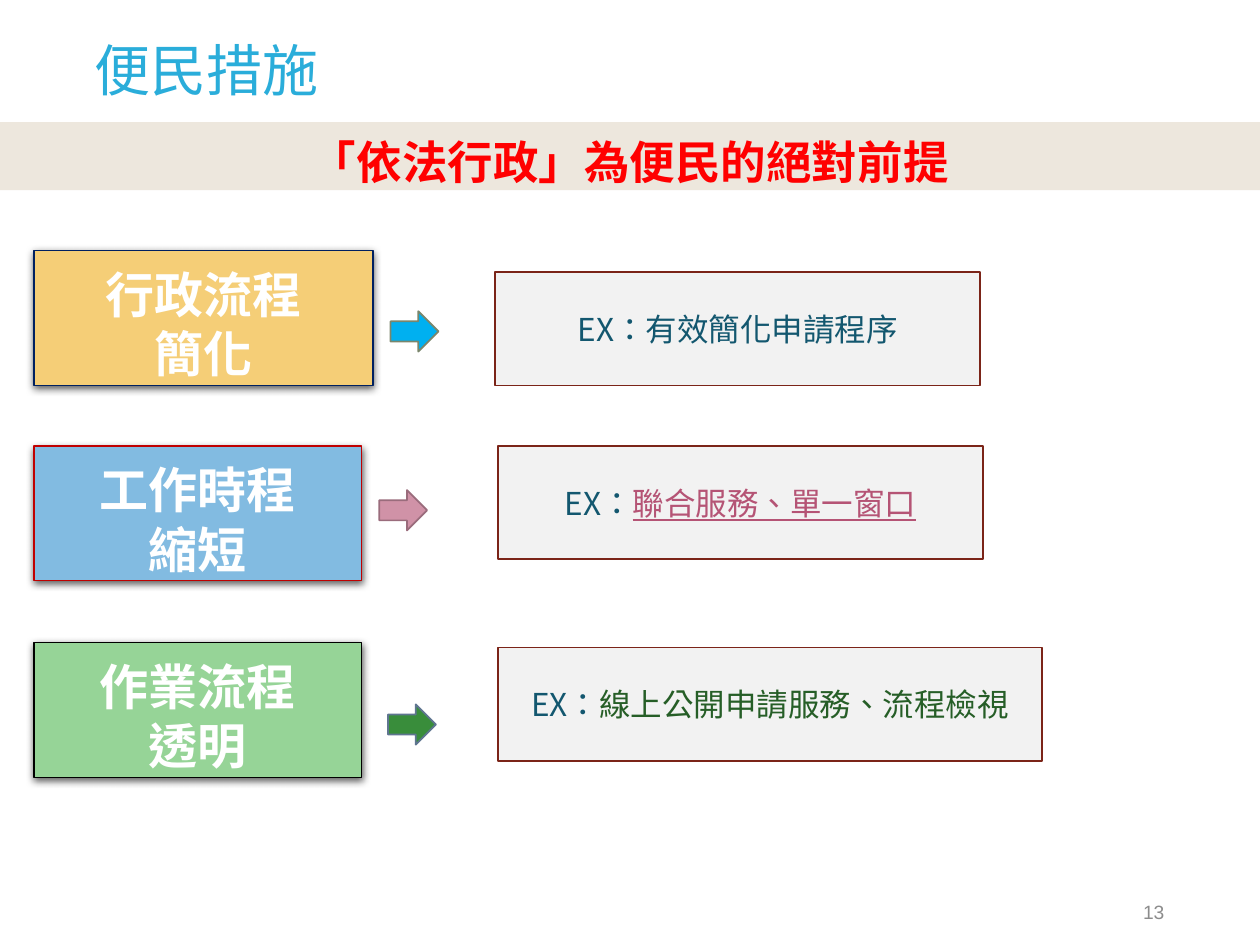
from dataclasses import dataclass
from lxml.etree import SubElement
from pptx import Presentation
from pptx.dml.color import RGBColor
from pptx.enum.shapes import MSO_SHAPE
from pptx.enum.text import MSO_ANCHOR, PP_ALIGN
from pptx.oxml.ns import qn
from pptx.util import Inches, Pt


@dataclass(frozen=True)
class Theme:
    sans: str = "Arial"
    cjk: str = "Noto Sans CJK SC"
    trad: str = "Noto Sans CJK TC"
    title: str = "2AADDA"
    number: str = "8C8C8C"
    alert: str = "FF0000"
    band: str = "EDE7DD"
    white: str = "FFFFFF"
    panel: str = "F2F2F2"
    border: str = "7B2418"
    body: str = "13576F"
    link: str = "B55475"
    green: str = "265E27"
    head_size: int = 32
    step_size: int = 28
    band_size: int = 26
    body_size: int = 18
    note_size: int = 11


class Page:
    def __init__(self, slide, theme):
        self.slide = slide
        self.theme = theme

    def run(self, para, text, size, color, font=None, bold=False, line=False):
        run = para.add_run()
        run.text = text
        face = run.font
        face.size = Pt(size)
        face.color.rgb = RGBColor.from_string(color)
        face.name = font or self.theme.cjk
        face.bold = bold
        if line:
            face.underline = True
        # East Asian font and Traditional Chinese glyph forms
        props = run._r.get_or_add_rPr()
        props.set("lang", "zh-TW")
        east = self.theme.trad if font == self.theme.sans else face.name
        props.find(qn("a:latin")).addnext(
            props.makeelement(qn("a:ea"), {"typeface": east}))

    def title(self, text, *box):
        shape = self.slide.shapes.title
        shape.left, shape.top, shape.width, shape.height = map(Inches, box)
        frame = shape.text_frame
        frame.vertical_anchor = MSO_ANCHOR.BOTTOM
        para = frame.paragraphs[0]
        para.alignment = PP_ALIGN.LEFT
        para.line_spacing = 0.9
        self.run(para, text, self.theme.head_size, self.theme.title, self.theme.sans)

    def number(self, text, *box):
        frame = self.slide.shapes.add_textbox(*map(Inches, box)).text_frame
        frame.word_wrap = True
        frame.vertical_anchor = MSO_ANCHOR.MIDDLE
        para = frame.paragraphs[0]
        para.alignment = PP_ALIGN.RIGHT
        self.run(para, text, self.theme.note_size, self.theme.number, self.theme.sans)

    def shape(self, kind, box, fill, line=None, width=1):
        shape = self.slide.shapes.add_shape(kind, *map(Inches, box))
        shape.shadow.inherit = False
        shape.fill.solid()
        shape.fill.fore_color.rgb = RGBColor.from_string(fill)
        if line:
            shape.line.color.rgb = RGBColor.from_string(line)
            shape.line.width = Pt(width)
        else:
            shape.line.fill.background()
        return shape

    def shade(self, shape):
        effects = shape._element.spPr.find(qn("a:effectLst"))
        outer = SubElement(effects, qn("a:outerShdw"), blurRad=str(Pt(4.5)),
                           dist=str(Pt(1.5)), dir="5400000", rotWithShape="0")
        color = SubElement(outer, qn("a:srgbClr"), val="000000")
        SubElement(color, qn("a:alpha"), val="63000")

    def lines(self, shape, rows, size, pitch=None):
        """Fill a shape with centred lines; each is a list of (text, style)."""
        frame = shape.text_frame
        frame.word_wrap = True
        frame.vertical_anchor = MSO_ANCHOR.MIDDLE
        if pitch:
            frame.margin_top = Inches(0.13)
        for i, parts in enumerate(rows):
            para = frame.add_paragraph() if i else frame.paragraphs[0]
            para.alignment = PP_ALIGN.CENTER
            if pitch:
                para.line_spacing = Pt(pitch)
            for text, style in parts:
                self.run(para, text, size, **style)

    def step(self, rows, box, fill, line):
        shape = self.shape(MSO_SHAPE.RECTANGLE, box, fill, line, 0.75)
        self.shade(shape)
        style = {"color": self.theme.white, "bold": True}
        self.lines(shape, [[(row, style)] for row in rows], self.theme.step_size, 34)

    def arrow(self, left, top, fill, line):
        shape = self.shape(MSO_SHAPE.DOWN_ARROW, (left, top, 0.32, 0.38), fill, line)
        shape.rotation = 270

    def panel(self, parts, box):
        shape = self.shape(MSO_SHAPE.RECTANGLE, box, self.theme.panel, self.theme.border)
        self.lines(shape, [parts], self.theme.body_size)

    def band(self, parts, box):
        shape = self.shape(MSO_SHAPE.RECTANGLE, box, self.theme.band)
        self.lines(shape, [parts], self.theme.band_size, 31)


def main():
    deck = Presentation()
    deck.slide_width, deck.slide_height = Inches(10), Inches(7.5)
    theme = Theme()
    page = Page(deck.slides.add_slide(deck.slide_layouts[5]), theme)

    # Title and page number
    page.title("便民措施", 0.65, 0.11, 8.06, 0.76)
    page.number("13", 7.09, 7.04, 2.25, 0.4)

    # Measures on the left
    steps = [
        (("行政流程", "簡化"), 1.99, 2.69, "F5CE77", "002060"),
        (("工作時程", "縮短"), 3.54, 2.6, "82BBE1", "C00000"),
        (("作業流程", "透明"), 5.1, 2.6, "96D497", "000000"),
    ]
    for rows, top, width, fill, line in steps:
        page.step(rows, (0.27, top, width, 1.07), fill, line)

    # Arrows to the examples
    arrows = [
        (3.13, 2.44, "00B0F0", "7A866C"),
        (3.04, 3.86, "D092A7", "9A6C7C"),
        (3.11, 5.56, "398D3B", "5F7590"),
    ]
    for arrow in arrows:
        page.arrow(*arrow)

    # Examples on the right
    body = {"color": theme.body}
    panels = [
        ("有效簡化申請程序", body, 3.93, 2.16, 3.85),
        ("聯合服務、單一窗口", {"color": theme.link, "line": True}, 3.95, 3.54, 3.85),
        ("線上公開申請服務、流程檢視", {"color": theme.green}, 3.95, 5.14, 4.32),
    ]
    for text, style, left, top, width in panels:
        page.panel([("EX：", body), (text, style)], (left, top, width, 0.9))

    # Key message band
    alert = {"color": theme.alert, "bold": True}
    page.band([("「依法行政", alert), ("」", {**alert, "font": theme.trad}),
               ("為便民的絕對前提", alert)], (0, 0.97, 10, 0.54))

    deck.save("out.pptx")


if __name__ == "__main__":
    main()
